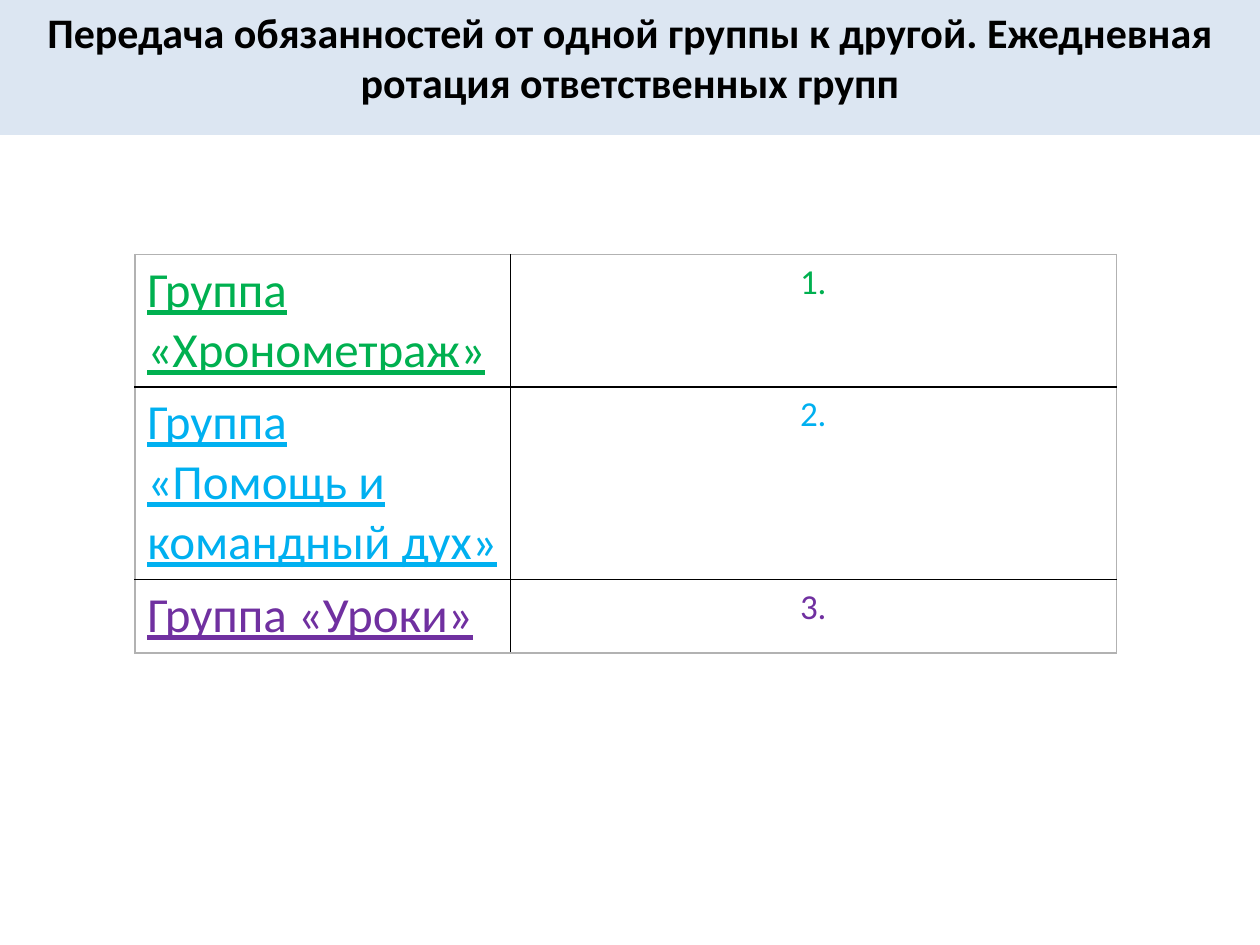
from lxml import etree
from pptx import Presentation
from pptx.dml.color import RGBColor
from pptx.enum import text
from pptx.oxml import ns
from pptx.util import Inches, Pt

TITLE = "Передача обязанностей от одной группы к другой. Ежедневная ротация ответственных групп"
GREEN = RGBColor(0x00, 0xB0, 0x50)
BLUE = RGBColor(0x00, 0xB0, 0xF0)
PURPLE = RGBColor(0x70, 0x30, 0xA0)
BLACK = RGBColor(0x00, 0x00, 0x00)
GRAY = RGBColor(0xB2, 0xB2, 0xB2)
PALE_BLUE = RGBColor(0xDC, 0xE6, 0xF2)
FONT = "Calibri"

GROUPS = [
    ("Группа «Хронометраж»", "1.", GREEN, 1.05),
    ("Группа «Помощь и командный дух»", "2.", BLUE, 1.53),
    ("Группа «Уроки»", "3.", PURPLE, 0.58),
]
COLUMN_WIDTHS = [2.98, 4.81]


def style(para, size, color):
    para.font.name = FONT
    para.font.size = Pt(size)
    para.font.color.rgb = color


def set_borders(cell, colors):
    properties = cell._tc.get_or_add_tcPr()
    for index, (side, color) in enumerate(colors.items()):
        line = etree.Element(ns.qn("a:" + side), w=str(Pt(1)))
        fill = etree.SubElement(line, ns.qn("a:solidFill"))
        etree.SubElement(fill, ns.qn("a:srgbClr"), val=str(color))
        properties.insert(index, line)


def add_title(slide):
    title = slide.shapes.title
    title.left, title.top = Inches(0), Inches(0)
    title.width, title.height = Inches(10), Inches(1.07)
    title.fill.solid()
    title.fill.fore_color.rgb = PALE_BLUE
    frame = title.text_frame
    frame.text = TITLE
    frame.word_wrap = True
    frame.auto_size = text.MSO_AUTO_SIZE.NONE
    frame.vertical_anchor = text.MSO_ANCHOR.TOP
    para = frame.paragraphs[0]
    para.alignment = text.PP_ALIGN.CENTER
    style(para, 24, BLACK)
    para.font.bold = True


def add_groups(slide):
    last_row, last_column = len(GROUPS) - 1, len(COLUMN_WIDTHS) - 1
    table = slide.shapes.add_table(
        len(GROUPS), len(COLUMN_WIDTHS), Inches(1.07), Inches(2.02),
        Inches(sum(COLUMN_WIDTHS)), Inches(sum(group[3] for group in GROUPS)),
    ).table
    table.first_row = table.horz_banding = False
    for column, width in zip(table.columns, COLUMN_WIDTHS):
        column.width = Inches(width)
    for r, (name, number, color, height) in enumerate(GROUPS):
        table.rows[r].height = Inches(height)
        for c, words in enumerate((name, number)):
            cell = table.cell(r, c)
            cell.text = words
            cell.fill.background()
            set_borders(cell, {
                "lnL": GRAY if c == 0 else BLACK,
                "lnR": GRAY if c == last_column else BLACK,
                "lnT": GRAY if r == 0 else BLACK,
                "lnB": GRAY if r == last_row else BLACK,
            })
            para = cell.text_frame.paragraphs[0]
            style(para, 28 if c == 0 else 20, color)
            para.font.underline = c == 0
            para.alignment = text.PP_ALIGN.LEFT if c == 0 else text.PP_ALIGN.CENTER


def main():
    deck = Presentation()
    deck.slide_width, deck.slide_height = Inches(10), Inches(7.5)
    slide = deck.slides.add_slide(deck.slide_layouts[5])
    add_title(slide)
    add_groups(slide)
    deck.save("out.pptx")


if __name__ == "__main__":
    main()
